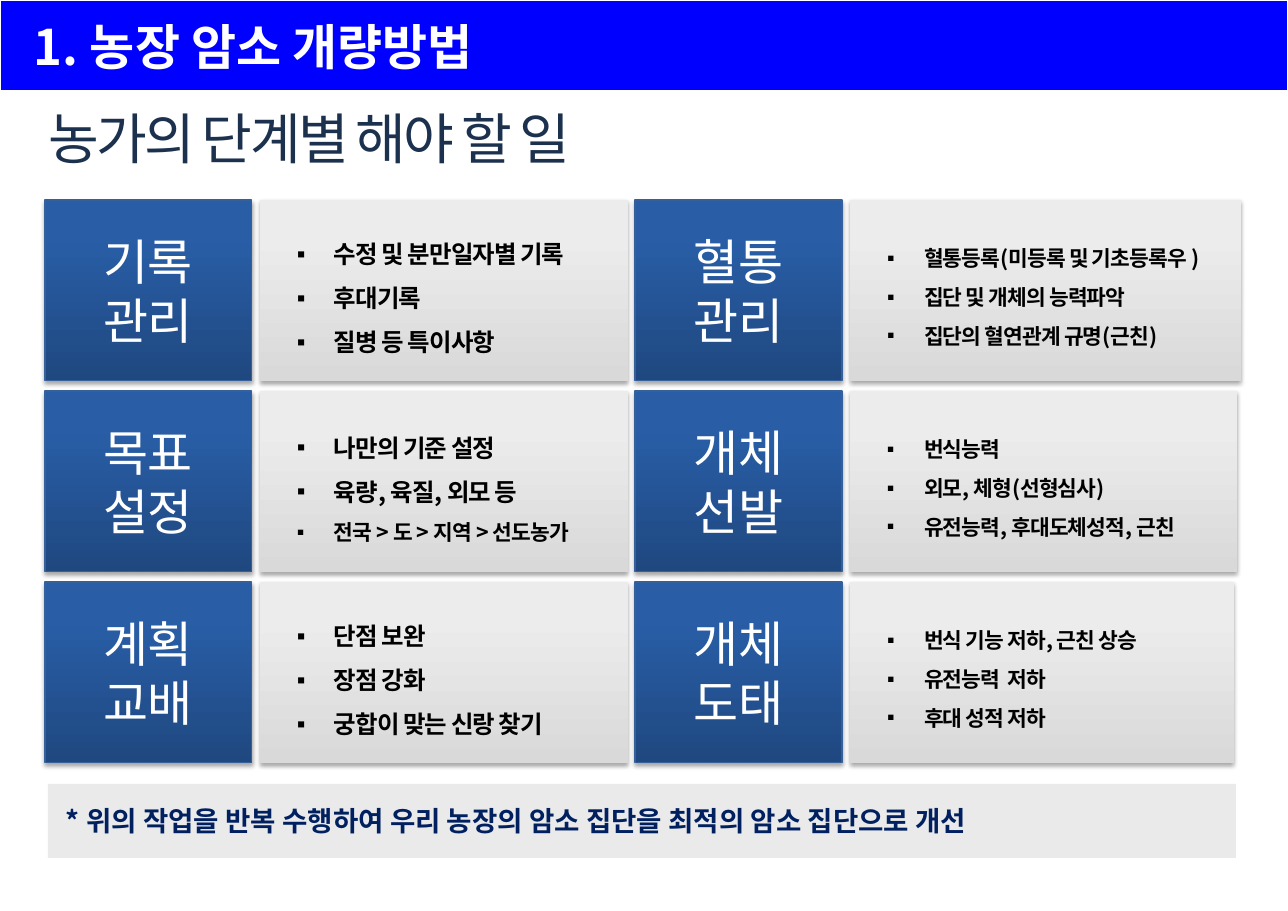
from lxml import etree
from pptx import Presentation
from pptx import util as u
from pptx.dml.color import RGBColor
from pptx.enum import shapes, text
from pptx.oxml.ns import qn

SCALE = 8298
FONT = "Noto Sans CJK KR"
WHITE = RGBColor(0xFF, 0xFF, 0xFF)
BLACK = RGBColor(0, 0, 0)
BLUE = RGBColor(0, 0, 0xFF)
SLATE = RGBColor(0x1C, 0x31, 0x4E)
NAVY = RGBColor(0x00, 0x20, 0x60)
STEP_DARK = RGBColor(0x1F, 0x48, 0x80)
STEP_LIGHT = RGBColor(0x29, 0x5E, 0xA7)
STEP_EDGE = RGBColor(0x35, 0x60, 0x9C)
TASK_DARK = RGBColor(0xD9, 0xD9, 0xD9)
TASK_LIGHT = RGBColor(0xEC, 0xEC, 0xEC)
NOTE_GREY = RGBColor(0xEA, 0xEA, 0xEA)

LEFT, TOP = 45, 200
COLUMN_PITCH, ROW_PITCH = 590, 191
STEP_WIDTH, CARD_HEIGHT, TASK_OFFSET = 207, 181, 215
TASK_WIDTHS = [(368, 391), (368, 387), (368, 384)]

STEPS = [
    [
        (("기록", "관리"), [("수정 및 분만일자별 기록", 16), ("후대기록", 16), ("질병 등 특이사항", 16)]),
        (("혈통", "관리"), [("혈통등록(미등록 및 기초등록우 )", 14), ("집단 및 개체의 능력파악", 14),
                        ("집단의 혈연관계 규명(근친)", 14)]),
    ],
    [
        (("목표", "설정"), [("나만의 기준 설정", 16), ("육량, 육질, 외모 등", 16),
                        ("전국 > 도 > 지역 > 선도농가", 14)]),
        (("개체", "선발"), [("번식능력", 14), ("외모, 체형(선형심사)", 14),
                        ("유전능력, 후대도체성적, 근친", 14)]),
    ],
    [
        (("계획", "교배"), [("단점 보완", 16), ("장점 강화", 16), ("궁합이 맞는 신랑 찾기", 16)]),
        (("개체", "도태"), [("번식 기능 저하, 근친 상승", 14), ("유전능력  저하", 14), ("후대 성적 저하", 14)]),
    ],
]


def px(n):
    return u.Emu(n * SCALE)


class Page:
    def __init__(self, deck):
        self.slide = deck.slides.add_slide(deck.slide_layouts[5])

    def frame(self, shape, insets, anchor=text.MSO_ANCHOR.MIDDLE):
        frame = shape.text_frame
        frame.word_wrap = True
        frame.auto_size = text.MSO_AUTO_SIZE.NONE
        frame.vertical_anchor = anchor
        frame.margin_left, frame.margin_top, frame.margin_right, frame.margin_bottom = map(px, insets)
        return frame

    def run(self, paragraph, words, size, color, bold=False, spacing=0):
        run = paragraph.add_run()
        run.text = words
        run.font.size = u.Pt(size)
        run.font.bold = bold
        run.font.name = FONT
        run.font.color.rgb = color
        properties = run.font._element
        properties.set("spc", str(spacing))
        etree.SubElement(properties, qn("a:ea"), typeface=FONT)

    def paragraph(self, frame, index, align=text.PP_ALIGN.LEFT):
        paragraph = frame.add_paragraph() if index else frame.paragraphs[0]
        paragraph.alignment = align
        return paragraph

    def title(self, box, words):
        title = self.slide.shapes.title
        title.left, title.top, title.width, title.height = map(px, box)
        frame = self.frame(title, (12, 7, 12, 7))
        self.run(self.paragraph(frame, 0), words, 36, SLATE, spacing=-170)

    def rectangle(self, box):
        shape = self.slide.shapes.add_shape(shapes.MSO_SHAPE.RECTANGLE, *map(px, box))
        shape.shadow.inherit = False
        shape.line.fill.background()
        return shape

    def card(self, box, dark, light, edge=None):
        card = self.rectangle(box)
        card.fill.gradient()
        card.fill.gradient_angle = 90
        for stop, position, color in zip(card.fill.gradient_stops, (0, 0.8), (dark, light)):
            stop.position = position
            stop.color.rgb = color
        if edge is not None:
            card.line.color.rgb = edge
            card.line.width = u.Pt(0.75)
        effects = card._element.spPr.find(qn("a:effectLst"))
        shadow = etree.SubElement(effects, qn("a:outerShdw"), blurRad="39400", dist="22900",
                                  dir="5400000", rotWithShape="0")
        black = etree.SubElement(shadow, qn("a:srgbClr"), val="000000")
        etree.SubElement(black, qn("a:alpha"), val="35000")
        return card

    def step(self, box, lines):
        frame = self.frame(self.card(box, STEP_DARK, STEP_LIGHT, STEP_EDGE), (12, 7, 12, 7))
        for index, line in enumerate(lines):
            paragraph = self.paragraph(frame, index, text.PP_ALIGN.CENTER)
            self.run(paragraph, line, 32, WHITE, spacing=-60)

    def tasks(self, box, items):
        frame = self.frame(self.card(box, TASK_DARK, TASK_LIGHT), (0, 7, 12, 7))
        for index, (words, size) in enumerate(items):
            paragraph = self.paragraph(frame, index)
            paragraph.line_spacing = 1.5
            properties = paragraph._p.get_or_add_pPr()
            properties.set("marL", str(px(74)))
            properties.set("indent", str(px(-37)))
            etree.SubElement(properties, qn("a:buFont"), typeface="Arial")
            etree.SubElement(properties, qn("a:buChar"), char="▪")
            self.run(paragraph, words, size, BLACK, True, -60)

    def note(self, box, words):
        note = self.rectangle(box)
        note.fill.solid()
        note.fill.fore_color.rgb = NOTE_GREY
        frame = self.frame(note, (18, 20, 12, 20))
        self.run(self.paragraph(frame, 0), words, 18, NAVY, True)

    def band(self, box):
        cell = self.slide.shapes.add_table(1, 1, *map(px, box)).table.cell(0, 0)
        cell.fill.solid()
        cell.fill.fore_color.rgb = BLUE

    def heading(self, box, words):
        heading = self.slide.shapes.add_textbox(*map(px, box))
        frame = self.frame(heading, (34, 0, 0, 0), text.MSO_ANCHOR.TOP)
        self.run(self.paragraph(frame, 0), words, 32, WHITE, True)


def main():
    deck = Presentation()
    deck.slide_width, deck.slide_height = px(1288), px(911)
    page = Page(deck)
    page.title((36, 99, 986, 77), "농가의 단계별 해야 할 일")
    for row, pair in enumerate(STEPS):
        top = TOP + row * ROW_PITCH
        for column, (name, items) in enumerate(pair):
            left = LEFT + column * COLUMN_PITCH
            page.step((left, top, STEP_WIDTH, CARD_HEIGHT), name)
            page.tasks((left + TASK_OFFSET, top, TASK_WIDTHS[row][column], CARD_HEIGHT), items)
    page.note((48, 784, 1188, 74), "* 위의 작업을 반복 수행하여 우리 농장의 암소 집단을 최적의 암소 집단으로 개선")
    page.band((0, 0, 1288, 91))
    page.heading((0, 17, 829, 60), "1. 농장 암소 개량방법")
    deck.save("out.pptx")


if __name__ == "__main__":
    main()
